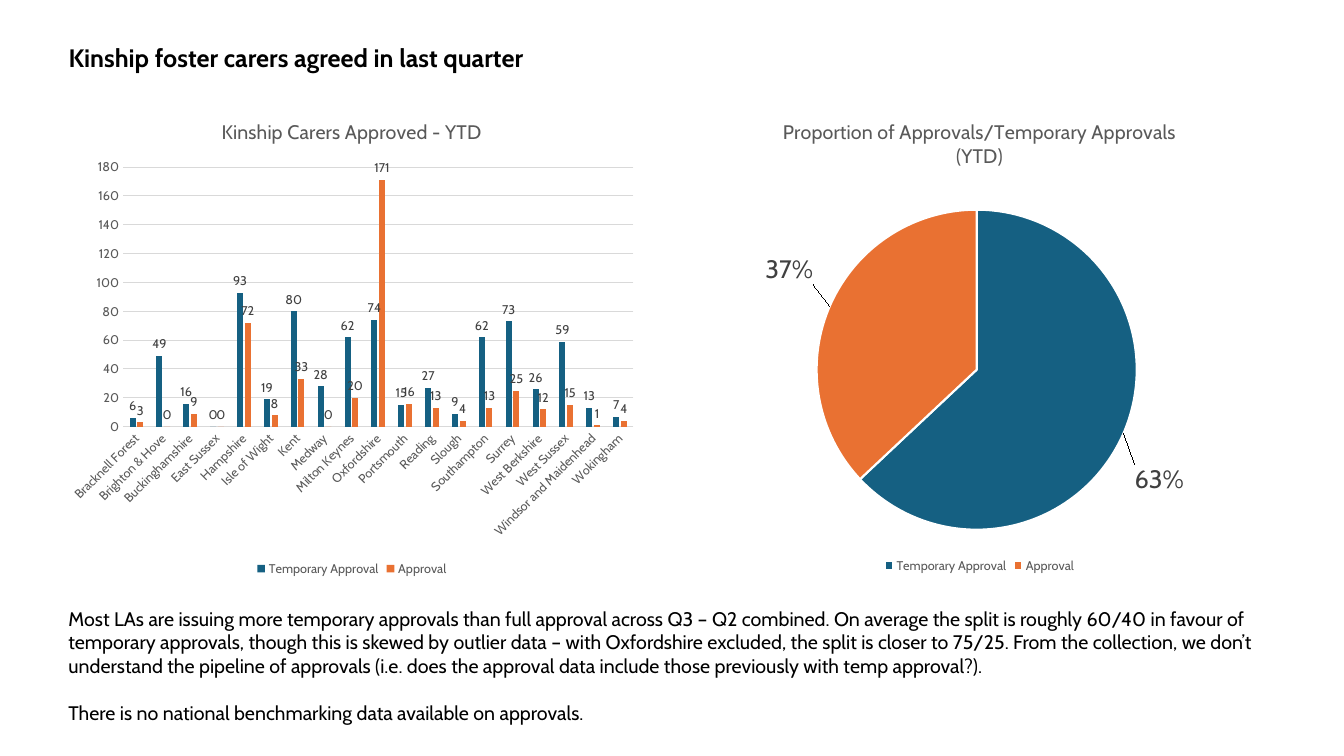
from copy import deepcopy
from pptx import Presentation
from pptx.chart.data import CategoryChartData as Data
from pptx.dml.color import RGBColor as Rgb
from pptx.enum.chart import XL_CHART_TYPE as Kind, XL_LABEL_POSITION as Spot
from pptx.enum.chart import XL_LEGEND_POSITION as Side, XL_TICK_MARK as Tick
from pptx.enum.text import MSO_ANCHOR as Anchor, PP_ALIGN as Align
from pptx.oxml import parse_xml
from pptx.oxml.ns import nsdecls
from pptx.util import Inches, Pt

WIDE, HIGH = 13.33, 7.5
FONT = "Cabin"
HUES = {"ink": "000000", "grey": "595959", "dark": "404040", "rule": "D9D9D9",
        "white": "FFFFFF", "blue": "156082", "orange": "E97132"}
PAIR = ("blue", "orange")
KINDS = ("Temporary Approval", "Approval")
HEAD = "Kinship foster carers agreed in last quarter"
NOTES = [
    "Most LAs are issuing more temporary approvals than full approval across Q3 – Q2 combined. "
    "On average the split is roughly 60/40 in favour of temporary approvals, though this is skewed "
    "by outlier data – with Oxfordshire excluded, the split is closer to 75/25. From the collection, "
    "we don’t understand the pipeline of approvals (i.e. does the approval data include those "
    "previously with temp approval?).",
    "There is no national benchmarking data available on approvals.",
]
AREAS = [
    ("Bracknell Forest", 6, 3), ("Brighton & Hove", 49, 0), ("Buckinghamshire", 16, 9),
    ("East Sussex", 0, 0), ("Hampshire", 93, 72), ("Isle of Wight", 19, 8), ("Kent", 80, 33),
    ("Medway", 28, 0), ("Milton Keynes", 62, 20), ("Oxfordshire", 74, 171),
    ("Portsmouth", 15, 16), ("Reading", 27, 13), ("Slough", 9, 4), ("Southampton", 62, 13),
    ("Surrey", 73, 25), ("West Berkshire", 26, 12), ("West Sussex", 59, 15),
    ("Windsor and Maidenhead", 13, 1), ("Wokingham", 7, 4),
]
SPLIT = (63, 37)
SHIFTS = ((0.01, 0.06), (-0.02, -0.04))
LEFT, TOP = 0.58, 0.99


def hue(name):
    return Rgb.from_string(HUES[name])


def style(font, size, name, bold=False):
    font.name, font.size, font.bold = FONT, Pt(size), bold
    font.color.rgb = hue(name)


def write(frame, lines, size=14, color="ink", bold=False, gap=0, align=Align.LEFT):
    frame.word_wrap = True
    for i, line in enumerate(lines):
        para = frame.paragraphs[0] if i == 0 else frame.add_paragraph()
        para.alignment = align
        para.space_before = Pt(gap if i else 0)
        run = para.add_run()
        run.text = line
        style(run.font, size, color, bold)


def layout(shares, inner=False):
    tags = '<c:layoutTarget val="inner"/>' if inner else ""
    if inner:
        tags += '<c:xMode val="edge"/><c:yMode val="edge"/>'
    tags += "".join(f'<c:{tag} val="{val}"/>' for tag, val in zip("xywh", shares))
    return parse_xml(f'<c:layout {nsdecls("c")}><c:manualLayout>{tags}</c:manualLayout></c:layout>')


def chart(kind, data, box, title, area):
    item = slide.shapes.add_chart(kind, *map(Inches, box), data).chart
    style(item.font, 10, "ink")
    item.has_title = True
    write(item.chart_title.text_frame, [title], color="grey", align=Align.CENTER)
    item.chart_title.include_in_layout = False
    item.has_legend = True
    item.legend.position = Side.BOTTOM
    item.legend.include_in_layout = False
    style(item.legend.font, 9, "grey")
    plot = item._chartSpace.chart.plotArea
    for old in plot.findall("{*}layout"):
        plot.remove(old)
    plot.insert(0, layout(area, True))
    return item


def paint(part, name):
    part.format.fill.solid()
    part.format.fill.fore_color.rgb = hue(name)


def label(row, size):
    tags = row.data_labels
    style(tags.font, size, "dark")
    tags.position = Spot.OUTSIDE_END
    return tags


deck = Presentation()
deck.slide_width, deck.slide_height = Inches(WIDE), Inches(HIGH)
slide = deck.slides.add_slide(deck.slide_layouts[5])

head = slide.shapes.title
head.left, head.top, head.width, head.height = map(Inches, (LEFT, 0.37, 10.75, 0.4))
head.text_frame.vertical_anchor = Anchor.MIDDLE
write(head.text_frame, [HEAD], size=18, bold=True)

note = slide.shapes.add_textbox(*map(Inches, (LEFT, 5.97, 12.42, 1.28)))
write(note.text_frame, NOTES, gap=17)

names, *cols = zip(*AREAS)
data = Data()
data.categories = names
for kind, vals in zip(KINDS, cols):
    data.add_series(kind, vals)
bars = chart(Kind.COLUMN_CLUSTERED, data, (LEFT, TOP, 5.82, 4.77),
             "Kinship Carers Approved - YTD", (0.11, 0.14, 0.87, 0.54))
plot = bars.plots[0]
plot.gap_width, plot.overlap, plot.vary_by_categories = 219, -27, False
for row, name in zip(plot.series, PAIR):
    paint(row, name)
    label(row, 9).show_value = True
cat, val = bars.category_axis, bars.value_axis
for axis in (cat, val):
    axis.major_tick_mark = axis.minor_tick_mark = Tick.NONE
    style(axis.tick_labels.font, 9, "grey")
val.minimum_scale, val.maximum_scale, val.major_unit = 0, 180, 20
val.format.line.fill.background()
for line in (cat.format.line, val.major_gridlines.format.line):
    line.color.rgb, line.width = hue("rule"), Pt(0.75)
cat._element.txPr.bodyPr.set("rot", "-2700000")

data = Data()
data.categories = KINDS
data.add_series("Series 1", SPLIT)
pie = chart(Kind.PIE, data, (6.93, TOP, 5.57, 4.74),
            "Proportion of Approvals/Temporary Approvals (YTD)", (0.21, 0.23, 0.57, 0.67))
pie.plots[0].vary_by_categories = True
row = pie.plots[0].series[0]
tags = label(row, 18)
tags.number_format, tags.number_format_is_linked = "0%", False
tags.show_percentage, tags.show_value = True, False
base = [part for part in tags._element if not part.tag.endswith("LeaderLines")]
for i, (name, shift) in enumerate(zip(PAIR, SHIFTS)):
    slice = row.points[i]
    paint(slice, name)
    slice.format.line.color.rgb, slice.format.line.width = hue("white"), Pt(1.5)
    tag = parse_xml(f'<c:dLbl {nsdecls("c")}><c:idx val="{i}"/></c:dLbl>')
    tag.append(layout(shift))
    tag.extend(deepcopy(base))
    tags._element.insert(i, tag)

deck.save("out.pptx")
